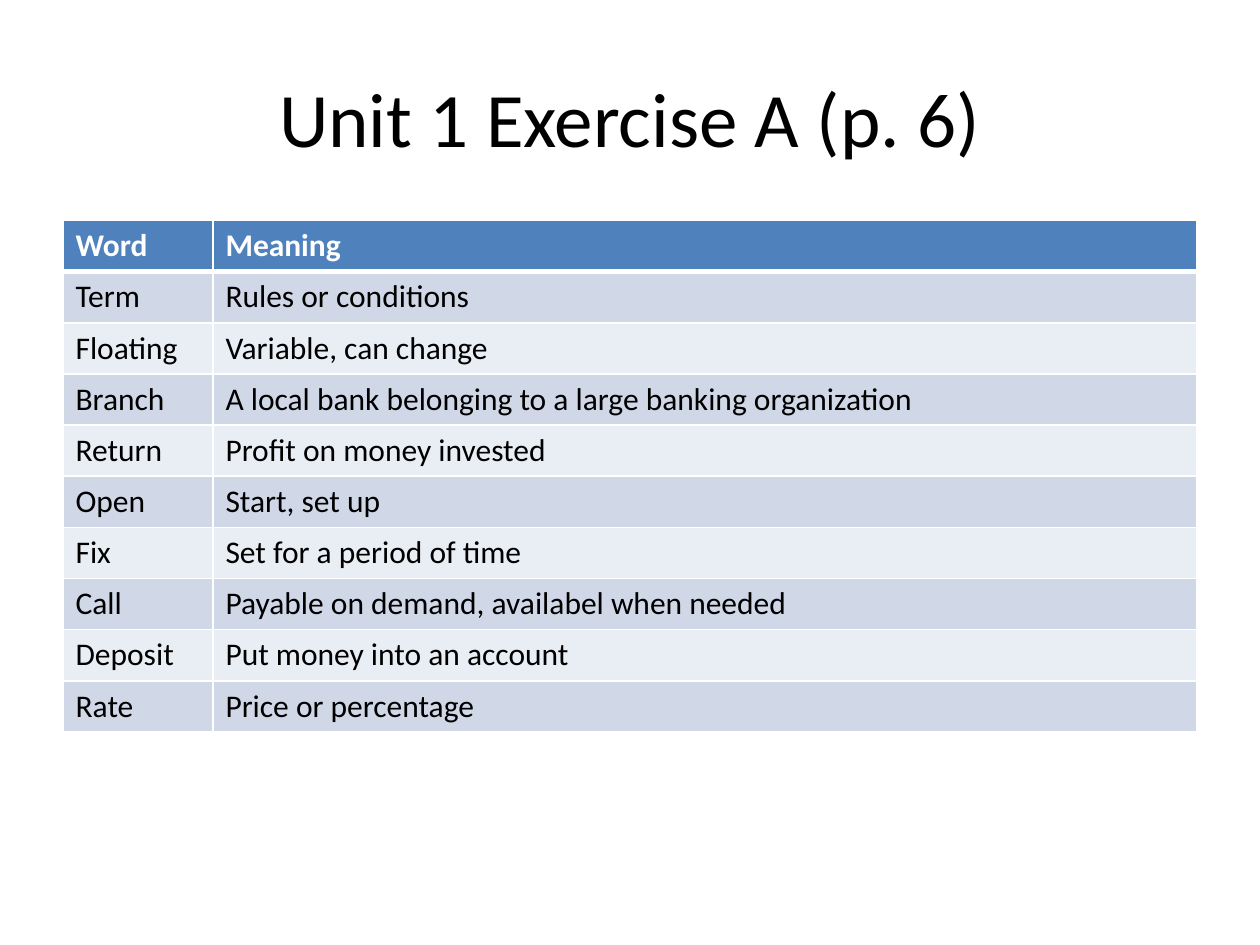
"""Build a vocabulary slide with a title and a word-meaning table."""
import dataclasses

import lxml.etree
import pptx
import pptx.dml.color
import pptx.enum.text
import pptx.oxml.ns
import pptx.util

Inches = pptx.util.Inches
Pt = pptx.util.Pt


@dataclasses.dataclass(frozen=True)
class Theme:
    font: str = "Calibri"
    title_size: int = 44
    body_size: int = 18
    text: str = "000000"
    header_text: str = "FFFFFF"
    header_fill: str = "4F81BD"
    bands: tuple = ("D0D8E8", "E9EDF4")
    border: str = "FFFFFF"
    border_width: int = 1
    header_rule: int = 3


class VocabularySlide:
    def __init__(self, prs, theme):
        self.theme = theme
        self.slide = prs.slides.add_slide(prs.slide_layouts[6])

    def format_text(self, tf, size, color, bold=False):
        for p in tf.paragraphs:
            for r in p.runs:
                r.font.name = self.theme.font
                r.font.size = Pt(size)
                r.font.bold = bold
                r.font.color.rgb = pptx.dml.color.RGBColor.from_string(color)

    def add_title(self, text, left, top, width, height):
        sp = self.slide.shapes.add_textbox(left, top, width, height)
        tf = sp.text_frame
        tf.word_wrap = True
        tf.vertical_anchor = pptx.enum.text.MSO_ANCHOR.MIDDLE
        tf.text = text
        tf.paragraphs[0].alignment = pptx.enum.text.PP_ALIGN.CENTER
        self.format_text(tf, self.theme.title_size, self.theme.text)

    def add_borders(self, cell, widths):
        qn = pptx.oxml.ns.qn
        tc_pr = cell._tc.get_or_add_tcPr()
        for side, width in widths.items():
            ln = lxml.etree.SubElement(tc_pr, qn(f"a:ln{side}"), w=str(Pt(width)))
            fill = lxml.etree.SubElement(ln, qn("a:solidFill"))
            lxml.etree.SubElement(fill, qn("a:srgbClr"), val=self.theme.border)

    def add_table(self, rows, left, top, col_widths, row_height):
        th = self.theme
        frame = self.slide.shapes.add_table(
            len(rows), len(col_widths), left, top,
            sum(col_widths), row_height * len(rows))
        table = frame.table
        for column, width in zip(table.columns, col_widths):
            column.width = width
        for i, row in enumerate(rows):
            table.rows[i].height = row_height
            header = i == 0
            fill = th.header_fill if header else th.bands[(i - 1) % 2]
            color = th.header_text if header else th.text
            widths = dict.fromkeys("LRTB", th.border_width)
            if header:
                widths["B"] = th.header_rule
            elif i == 1:
                widths["T"] = th.header_rule
            for j, text in enumerate(row):
                cell = table.cell(i, j)
                cell.text_frame.text = text
                self.format_text(cell.text_frame, th.body_size, color, header)
                self.add_borders(cell, widths)
                cell.fill.solid()
                cell.fill.fore_color.rgb = pptx.dml.color.RGBColor.from_string(fill)


def main():
    prs = pptx.Presentation()
    prs.slide_width, prs.slide_height = Inches(10), Inches(7.5)
    s = VocabularySlide(prs, Theme())
    s.add_title("Unit 1 Exercise A (p. 6)",
                Inches(0.5), Inches(0.3), Inches(9), Inches(1.25))
    vocabulary = [
        ("Word", "Meaning"),
        ("Term", "Rules or conditions"),
        ("Floating", "Variable, can change"),
        ("Branch", "A local bank belonging to a large banking organization"),
        ("Return", "Profit on money invested"),
        ("Open", "Start, set up"),
        ("Fix", "Set for a period of time"),
        ("Call", "Payable on demand, availabel when needed"),
        ("Deposit", "Put money into an account"),
        ("Rate", "Price or percentage"),
    ]
    s.add_table(vocabulary, Inches(0.5), Inches(1.75),
                (Inches(1.19), Inches(7.81)), Inches(4.06) // len(vocabulary))
    prs.save("out.pptx")


if __name__ == "__main__":
    main()
